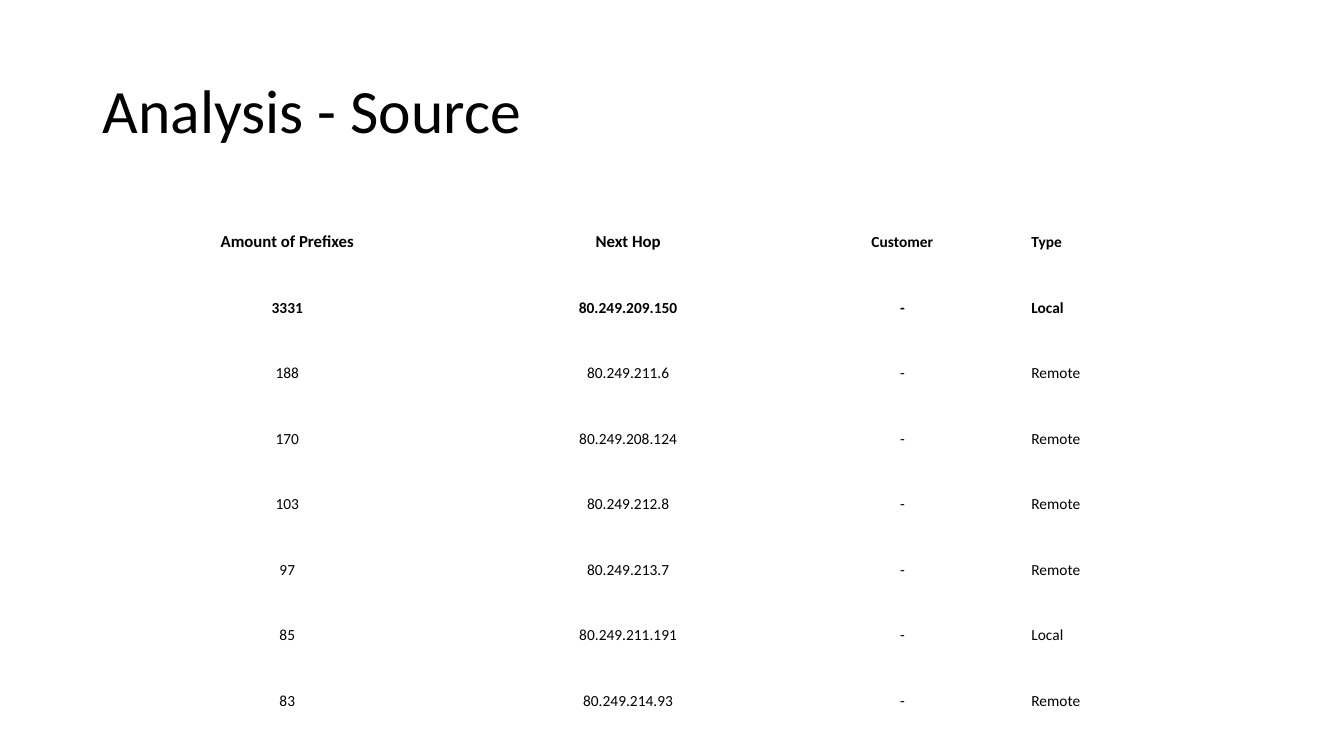
from dataclasses import dataclass

from pptx import Presentation
from pptx import util as u
from pptx.dml.color import RGBColor
from pptx.enum import text


@dataclass(frozen=True)
class Theme:
    font: str = "Calibri"
    ink: RGBColor = RGBColor(0, 0, 0)
    paper: RGBColor = RGBColor(255, 255, 255)
    title_size: int = 44
    heading_size: int = 12
    body_size: int = 11


THEME = Theme()
CENTER, LEFT = text.PP_ALIGN.CENTER, text.PP_ALIGN.LEFT

HEADINGS = ("Amount of Prefixes", "Next Hop", "Customer", "Type")
HOPS = (
    ("3331", "80.249.209.150", "Local"),
    ("188", "80.249.211.6", "Remote"),
    ("170", "80.249.208.124", "Remote"),
    ("103", "80.249.212.8", "Remote"),
    ("97", "80.249.213.7", "Remote"),
    ("85", "80.249.211.191", "Local"),
    ("83", "80.249.214.93", "Remote"),
)
PREFIX_ROWS = [HEADINGS] + [(count, hop, "-", kind) for count, hop, kind in HOPS]

# Shares of the slide, in percent
MARGIN = 6.9
COLUMN_WIDTHS = (28.96, 21.76, 19.05, 13.35)
ROW_HEIGHTS = (9.33,) + (8.67,) * len(HOPS)


def write(frame, wording, *, size, bold=False, align=LEFT, spacing=1.0):
    para = frame.paragraphs[0]
    para.alignment = align
    para.line_spacing = spacing
    span = para.add_run()
    span.text = wording
    span.font.name = THEME.font
    span.font.size = u.Pt(size)
    span.font.bold = bold
    span.font.color.rgb = THEME.ink


class Page:
    def __init__(self, deck, theme):
        self.deck = deck
        self.theme = theme
        self.slide = deck.slides.add_slide(deck.slide_layouts[5])
        fill = self.slide.background.fill
        fill.solid()
        fill.fore_color.rgb = theme.paper

    def across(self, percent):
        return u.Emu(round(self.deck.slide_width * percent / 100))

    def down(self, percent):
        return u.Emu(round(self.deck.slide_height * percent / 100))

    def title(self, wording, left, top, width, height):
        box = self.slide.shapes.title
        box.left, box.top = self.across(left), self.down(top)
        box.width, box.height = self.across(width), self.down(height)
        frame = box.text_frame
        frame.word_wrap = True
        frame.auto_size = text.MSO_AUTO_SIZE.NONE
        frame.vertical_anchor = text.MSO_ANCHOR.MIDDLE
        write(frame, wording, size=self.theme.title_size, spacing=0.9)

    def table(self, rows, left, top, widths, heights):
        table = self.slide.shapes.add_table(
            len(rows), len(widths), self.across(left), self.down(top),
            self.across(sum(widths)), self.down(sum(heights))).table
        table.first_row = table.horz_banding = False
        for column, width in zip(table.columns, widths):
            column.width = self.across(width)
        for r, (row, height) in enumerate(zip(rows, heights)):
            table.rows[r].height = self.down(height)
            for c, wording in enumerate(row):
                large = r == 0 and c < 2
                self.cell(
                    table.cell(r, c), wording, bold=r < 2,
                    size=self.theme.heading_size if large else self.theme.body_size,
                    align=LEFT if c == len(row) - 1 else CENTER)

    def cell(self, cell, wording, **style):
        cell.fill.background()
        cell.vertical_anchor = text.MSO_ANCHOR.BOTTOM
        cell.margin_left = cell.margin_right = cell.margin_top = u.Inches(0.01)
        cell.margin_bottom = u.Inches(0.05)
        write(cell.text_frame, wording, **style)


def main():
    deck = Presentation()
    deck.slide_width, deck.slide_height = u.Inches(13.33), u.Inches(7.5)
    page = Page(deck, THEME)
    page.title("Analysis - Source", MARGIN, 5.33, 86.25, 19.33)
    page.table(PREFIX_ROWS, MARGIN, 24.67, COLUMN_WIDTHS, ROW_HEIGHTS)
    deck.save("out.pptx")


if __name__ == "__main__":
    main()
